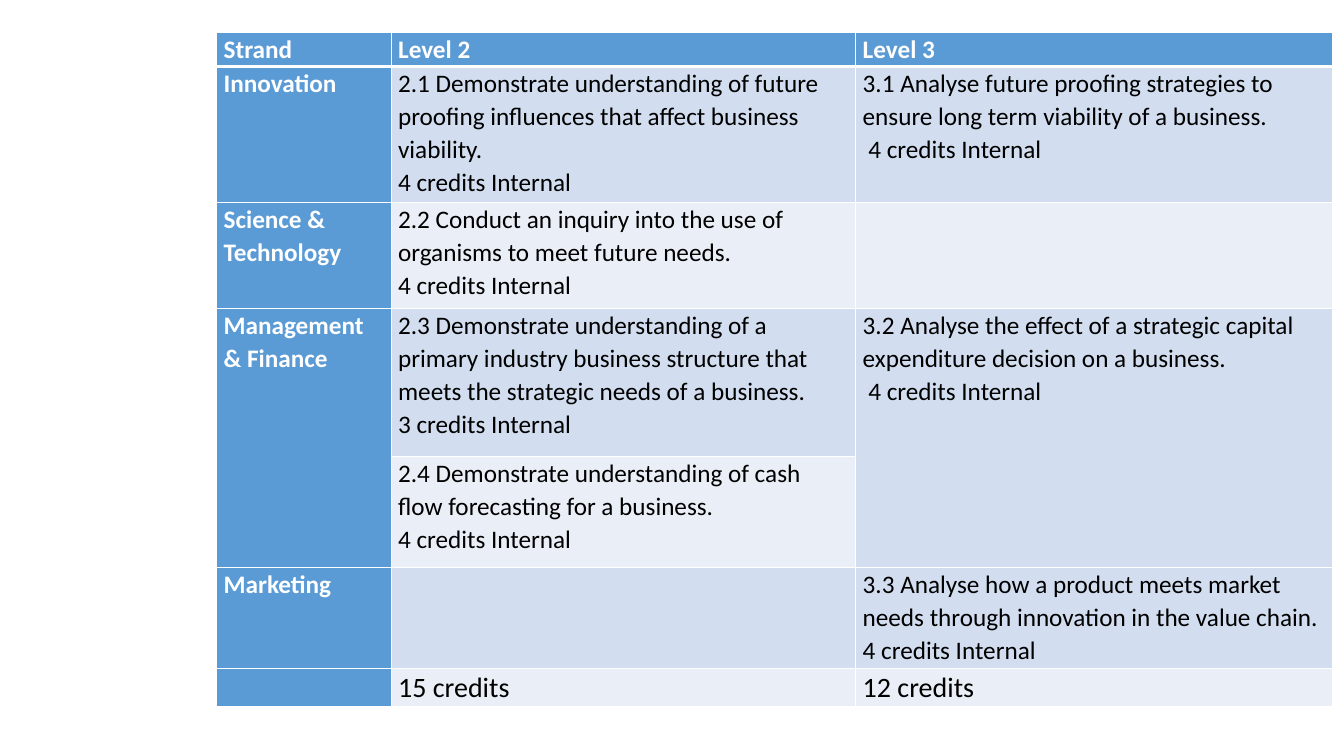
from dataclasses import dataclass

from lxml import etree
from pptx import Presentation
from pptx.dml.color import RGBColor
from pptx.oxml.ns import qn
from pptx.util import Pt


@dataclass(frozen=True)
class Theme:
    """Colours, type and line sizes of the slide."""

    font: str = "Calibri"
    header: str = "5B9BD5"
    bands: tuple = ("EAEFF7", "D2DEEF")
    light: str = "FFFFFF"
    dark: str = "000000"
    text_size: float = 18
    total_size: float = 20
    line_spacing: float = 1.07
    cell_margin: float = 5
    border: float = 1
    header_border: float = 3


THEME = Theme()
BLANK_LAYOUT = 6
TABLE_BOX = (154.8, 23, 797, 482)
COLUMN_WIDTHS = (124.6, 331.9, 340.5)
ROW_HEIGHTS = (24.5, 97.2, 75.6, 105.9, 79.2, 72, 27.6)
MERGED_ROWS = (3, 4)
MERGED_COLUMNS = (0, 2)

STANDARDS = [
    [["Strand"], ["Level 2"], ["Level 3"]],
    [
        ["Innovation"],
        ["2.1 Demonstrate understanding of future proofing influences that affect business viability.",
         "4 credits Internal"],
        ["3.1 Analyse future proofing strategies to ensure long term viability of a business.",
         " 4 credits Internal"],
    ],
    [
        ["Science & Technology"],
        ["2.2 Conduct an inquiry into the use of organisms to meet future needs.",
         "4 credits Internal"],
        [],
    ],
    [
        ["Management & Finance"],
        ["2.3 Demonstrate understanding of a primary industry business structure that meets "
         "the strategic needs of a business.",
         "3 credits Internal"],
        ["3.2 Analyse the effect of a strategic capital expenditure decision on a business.",
         " 4 credits Internal"],
    ],
    [
        [],
        ["2.4 Demonstrate understanding of cash flow forecasting for a business.",
         "4 credits Internal"],
        [],
    ],
    [
        ["Marketing"],
        [],
        ["3.3 Analyse how a product meets market needs through innovation in the value chain.",
         "4 credits Internal"],
    ],
    [[], ["15 credits"], ["12 credits"]],
]


def set_borders(cell, bottom_width):
    """Draw light borders around a cell, with its own width at the bottom."""
    properties = cell._tc.get_or_add_tcPr()
    for side in ("L", "R", "T", "B"):
        width = bottom_width if side == "B" else THEME.border
        line = etree.SubElement(properties, qn(f"a:ln{side}"), w=str(Pt(width)))
        fill = etree.SubElement(line, qn("a:solidFill"))
        etree.SubElement(fill, qn("a:srgbClr"), val=THEME.light)


def write_lines(cell, lines, size, color, bold):
    """Write each line as one paragraph of the cell."""
    frame = cell.text_frame
    for index, line in enumerate(lines):
        paragraph = frame.add_paragraph() if index else frame.paragraphs[0]
        paragraph.line_spacing = THEME.line_spacing
        run = paragraph.add_run()
        run.text = line
        run.font.name = THEME.font
        run.font.size = Pt(size)
        run.font.bold = bold
        run.font.color.rgb = RGBColor.from_string(color)


def style_cell(cell, row, column, lines):
    """Format and fill one cell according to its place in the table."""
    is_heading = row == 0 or column == 0
    is_total = row == len(ROW_HEIGHTS) - 1
    cell.margin_left = cell.margin_right = Pt(THEME.cell_margin)
    cell.margin_top = cell.margin_bottom = Pt(0)
    set_borders(cell, THEME.border if row else THEME.header_border)
    cell.fill.solid()
    background = THEME.header if is_heading else THEME.bands[row % 2]
    cell.fill.fore_color.rgb = RGBColor.from_string(background)
    write_lines(
        cell,
        lines,
        THEME.total_size if is_total else THEME.text_size,
        THEME.light if is_heading else THEME.dark,
        is_heading,
    )


def add_standards_table(slide, box):
    """Place the table of standards by strand and level in the given box."""
    left, top, width, height = (Pt(length) for length in box)
    table = slide.shapes.add_table(
        len(ROW_HEIGHTS), len(COLUMN_WIDTHS), left, top, width, height
    ).table
    table.first_col = True
    for column, column_width in zip(table.columns, COLUMN_WIDTHS):
        column.width = Pt(column_width)
    for row, row_height in zip(table.rows, ROW_HEIGHTS):
        row.height = Pt(row_height)
    for row, cells in enumerate(STANDARDS):
        for column, lines in enumerate(cells):
            style_cell(table.cell(row, column), row, column, lines)
    first_row, last_row = MERGED_ROWS
    for column in MERGED_COLUMNS:
        table.cell(first_row, column).merge(table.cell(last_row, column))


def main():
    """Build the slide and save the presentation."""
    presentation = Presentation()
    presentation.slide_width = Pt(960)
    presentation.slide_height = Pt(540)
    slide = presentation.slides.add_slide(presentation.slide_layouts[BLANK_LAYOUT])
    add_standards_table(slide, TABLE_BOX)
    presentation.save("out.pptx")


if __name__ == "__main__":
    main()
